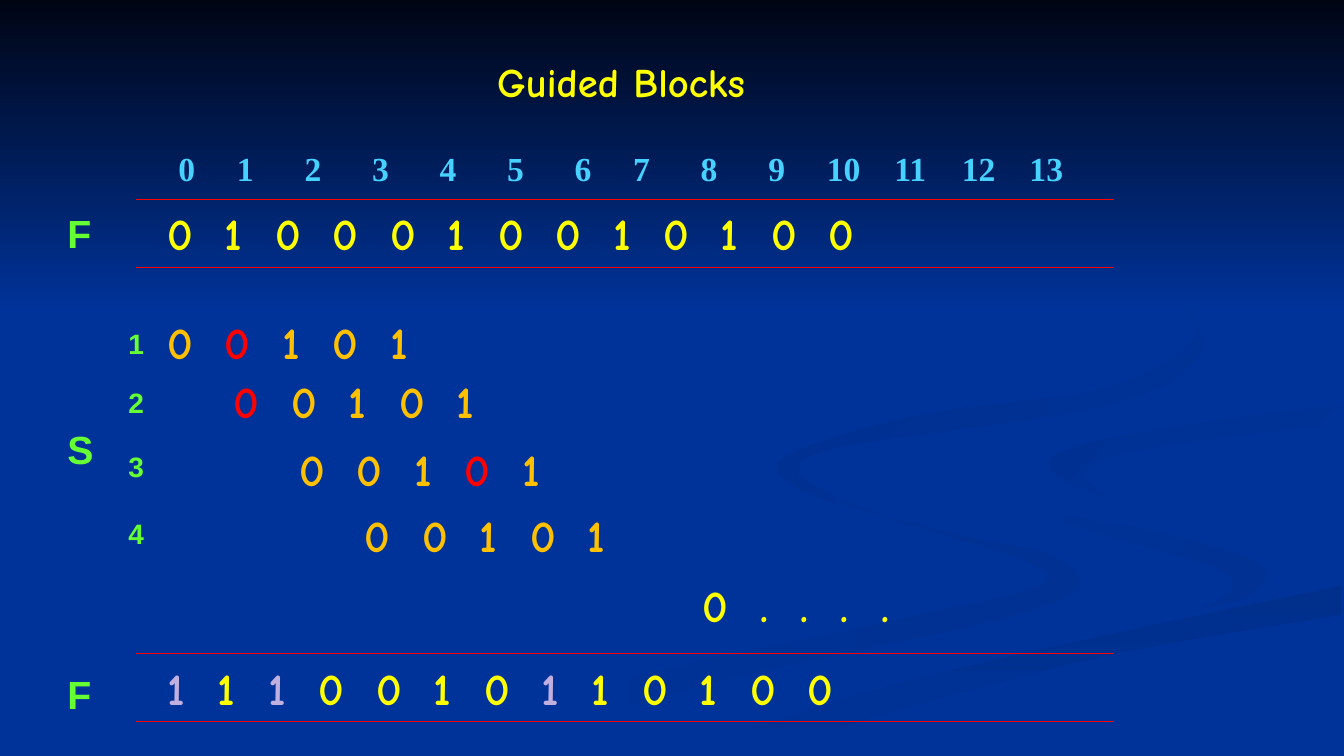
from itertools import accumulate, groupby

from lxml.etree import SubElement
from pptx import Presentation
from pptx.dml.color import RGBColor
from pptx.enum.shapes import MSO_CONNECTOR, MSO_SHAPE
from pptx.enum.text import MSO_ANCHOR, MSO_AUTO_SIZE, PP_ALIGN
from pptx.oxml.ns import qn
from pptx.util import Inches, Pt

COLORS = {
    "background": "003399", "night": "000514", "yellow": "FFFF00", "orange": "FFC000",
    "red": "FF0000", "lilac": "C1AFE0", "sky": "47D1FF", "green": "66FF33",
    "wave": "003193", "band": "002F8C", "hook": "003091", "curl": "002F8E",
}

# Each wave: start colour, end colour, angle, and the knots of its two edges.
WAVES = [
    ("background", "wave", 0,
     [(7.7, 4.6), (8, 4.9), (9.5, 5.3), (10.4, 5.5), (10.7, 5.8), (10.1, 6.1),
      (8.3, 6.5), (6.6, 6.9), (4.8, 7.5)],
     [(4, 7.5), (5.6, 6.9), (7.2, 6.5), (9.1, 6.1), (10.4, 5.7), (8.7, 5.1), (7.7, 4.6)]),
    ("background", "wave", 45,
     [(9.65, 4.6), (10.1, 5), (11.6, 5.3), (12.5, 5.6), (12.4, 5.9), (11.9, 6.05)],
     [(12.2, 5.9), (12.1, 5.65), (10.9, 5.3), (9.9, 4.95), (9.65, 4.6)]),
    ("band", "background", 90,
     [(6.7, 7.5), (8.4, 6.93), (10.2, 6.47), (13.3, 5.81)],
     [(13.3, 6.1), (11, 6.5), (8.7, 7.1), (7.6, 7.5)]),
    ("hook", "background", 45,
     [(13.3, 4.02), (12, 4.18), (10.7, 4.42), (10.4, 4.65), (11, 4.96)],
     [(10.73, 4.72), (11.2, 4.48), (13.3, 4.2)]),
    ("curl", "background", 45,
     [(11.7, 3), (11.85, 3.35), (11, 3.84), (9, 4.14), (7.7, 4.6), (8.3, 5)],
     [(7.9, 4.7), (8.3, 4.44), (11, 4.02), (11.9, 3.5), (11.7, 3)]),
]

DIGIT_ADVANCE = {"0": 0.57, "1": 0.5, ".": 0.4}
DIGIT_ROWS = [  # left, top, symbols, base colour, highlight colour, highlighted indices
    (1.57, 2.09, "0100010010100", "yellow", "yellow", ()),
    (1.57, 3.17, "00101", "orange", "red", (1,)),
    (2.23, 3.76, "00101", "orange", "red", (0,)),
    (2.88, 4.43, "00101", "orange", "red", (3,)),
    (3.53, 5.09, "00101", "orange", "orange", ()),
    (6.88, 5.78, "0....", "yellow", "yellow", ()),
    (1.57, 6.6, "1110010110100", "yellow", "lilac", (0, 2, 7)),
]
LABEL_COLUMNS = [  # left, text size, label and top pairs
    (0.57, 28, (("F", 2.03), ("S", 4.17), ("F", 6.6))),
    (1.16, 20, (("1", 3.19), ("2", 3.78), ("3", 4.41), ("4", 5.08))),
]


def rgb(name):
    return RGBColor.from_string(COLORS[name])


def paint(shape, start, end, angle):
    """Fill with a gradient whose angle runs clockwise, without line or shadow."""
    shape.shadow.inherit = False
    shape.line.fill.background()
    shape.fill.gradient()
    shape.fill.gradient_angle = (360 - angle) % 360
    for stop, name in zip(shape.fill.gradient_stops, (start, end)):
        stop.color.rgb = rgb(name)


def smooth(knots, steps=6):
    """Return points of a Catmull-Rom curve through the knots."""
    padded = [knots[0], *knots, knots[-1]]
    points = [knots[0]]
    for quad in zip(padded, padded[1:], padded[2:], padded[3:]):
        for step in range(1, steps + 1):
            t = step / steps
            points.append(tuple(
                b + t * ((c - a) + t * ((2 * a - 5 * b + 4 * c - d)
                                        + t * (3 * b - a - 3 * c + d))) / 2
                for a, b, c, d in zip(*quad)))
    return points


def add_wave(page, start, end, angle, outer, inner):
    outline = [(Inches(x), Inches(y)) for x, y in smooth(outer) + smooth(inner)]
    builder = page.shapes.build_freeform(*outline[0])
    builder.add_line_segments(outline[1:], close=True)
    paint(builder.convert_to_shape(), start, end, angle)


def add_backdrop(page):
    page.background.fill.solid()
    page.background.fill.fore_color.rgb = rgb("background")
    for wave in WAVES:
        add_wave(page, *wave)
    sky = page.shapes.add_shape(MSO_SHAPE.RECTANGLE, 0, 0, Inches(13.33), Inches(3.08))
    paint(sky, "night", "background", 90)


def format_run(span, font, size, color):
    span.font.name = font
    span.font.size = Pt(size)
    span.font.bold = True
    span.font.color.rgb = rgb(color)


def set_frame(frame, horizontal, vertical):
    frame.word_wrap = True
    frame.auto_size = MSO_AUTO_SIZE.NONE
    frame.vertical_anchor = MSO_ANCHOR.TOP
    frame.margin_left = frame.margin_right = Inches(horizontal)
    frame.margin_top = frame.margin_bottom = Inches(vertical)


def add_title(page):
    title = page.shapes.title
    page.shapes._spTree.append(title._element)  # in front of the backdrop
    title.left, title.top = Inches(4.84), Inches(0.61)
    title.width, title.height = Inches(3.52), Inches(0.47)
    set_frame(title.text_frame, 0.09, 0.04)
    para = title.text_frame.paragraphs[0]
    para.text = "Guided Blocks"
    para.alignment = PP_ALIGN.LEFT
    para.line_spacing = 0.83
    format_run(para.runs[0], "Comic Neue", 29, "yellow")


def add_row(page, left, top, symbols, advances, font, size, colors):
    """Write symbols on tab stops, one run for each stretch of equal colour."""
    box = page.shapes.add_textbox(Inches(left), Inches(top), Inches(10.19), Inches(0.47))
    set_frame(box.text_frame, 0.09, 0.04)
    para = box.text_frame.paragraphs[0]
    para.line_spacing = 0.83
    tabs = SubElement(para._p.get_or_add_pPr(), qn("a:tabLst"))
    for stop in accumulate(advances[:-1]):
        SubElement(tabs, qn("a:tab"), pos=str(Inches(stop)), algn="l")
    for color, group in groupby(zip(symbols, colors), key=lambda pair: pair[1]):
        lead = "\t" if para.runs else ""
        span = para.add_run()
        span.text = lead + "\t".join(symbol for symbol, _ in group)
        format_run(span, font, size, color)


def add_index_row(page):
    symbols = [str(index) for index in range(14)]
    advances = [0.58 if symbol in "069" else 0.67 for symbol in symbols]
    add_row(page, 1.68, 1.5, symbols, advances, "Times New Roman", 24, ["sky"] * 14)


def add_digit_row(page, left, top, symbols, base, highlight, marked):
    advances = [DIGIT_ADVANCE[symbol] for symbol in symbols]
    colors = [highlight if index in marked else base for index in range(len(symbols))]
    add_row(page, left, top, symbols, advances, "Comic Neue", 32, colors)


def add_label(page, left, top, text, size):
    box = page.shapes.add_textbox(Inches(left), Inches(top), Inches(0.38), Inches(0.47))
    set_frame(box.text_frame, 0.1, 0.05)
    para = box.text_frame.paragraphs[0]
    para.text = text
    para.alignment = PP_ALIGN.CENTER
    para.space_before = Pt(size * 0.14)
    format_run(para.runs[0], "Arial", size, "green")


def add_rule(page, top):
    rule = page.shapes.add_connector(
        MSO_CONNECTOR.STRAIGHT, Inches(1.35), Inches(top), Inches(11.05), Inches(top))
    rule.line.color.rgb = rgb("red")
    rule.line.width = Pt(0.75)
    SubElement(rule._element.spPr, qn("a:effectLst"))


def main():
    deck = Presentation()
    deck.slide_width, deck.slide_height = Inches(13.33), Inches(7.5)
    page = deck.slides.add_slide(deck.slide_layouts[5])
    add_backdrop(page)
    add_title(page)
    add_index_row(page)
    for row in DIGIT_ROWS:
        add_digit_row(page, *row)
    for top in (1.98, 2.65, 6.48, 7.16):
        add_rule(page, top)
    for left, size, labels in LABEL_COLUMNS:
        for text, top in labels:
            add_label(page, left, top, text, size)
    deck.save("out.pptx")


if __name__ == "__main__":
    main()
